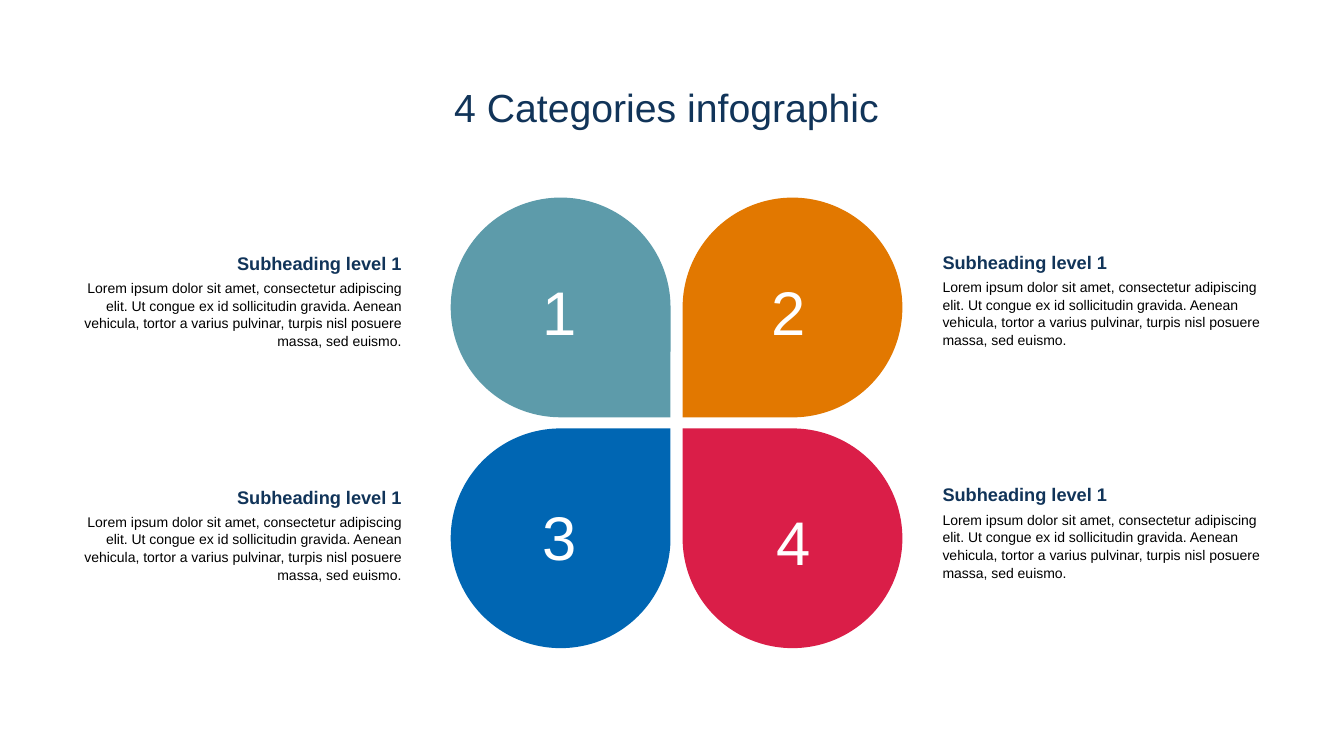
from pptx import Presentation
from pptx.dml.color import RGBColor
from pptx.enum.shapes import MSO_SHAPE
from pptx.enum.text import MSO_AUTO_SIZE, PP_ALIGN
from pptx.util import Inches, Pt

TEARDROP = MSO_SHAPE.TEAR
GROW = MSO_AUTO_SIZE.SHAPE_TO_FIT_TEXT
LEFT, CENTER, RIGHT = PP_ALIGN.LEFT, PP_ALIGN.CENTER, PP_ALIGN.RIGHT

THEME = {
    "font": "Arial",
    "navy": "113459",
    "black": "000000",
    "white": "FFFFFF",
    "petals": ["5D9BAA", "E27800", "0066B3", "DA1E48"],
    "title": 28,
    "number": 44,
    "heading": 13,
    "body": 10,
}
HEADING = "Subheading level 1"
BODY = (
    "Lorem ipsum dolor sit amet, consectetur adipiscing elit. "
    "Ut congue ex id sollicitudin gravida. Aenean vehicula, tortor a varius "
    "pulvinar, turpis nisl posuere massa, sed euismo."
)

PETAL = 2.18
PETAL_LEFT, PETAL_TOP = 4.47, 1.96
COLUMN_STEP, ROW_STEP = 2.3, 2.29
ROTATIONS = [90, 180, 0, 270]
NUMBER_PLACES = [(4.68, 2.67), (6.95, 2.67), (4.68, 4.9), (7, 4.95)]
CAPTION_PLACES = [(0.71, 2.52), (9.25, 2.51), (0.71, 4.84), (9.25, 4.82)]

deck = Presentation()
deck.slide_width, deck.slide_height = Inches(13.33), Inches(7.5)
page = deck.slides.add_slide(deck.slide_layouts[6])


def add_text(left, top, width, height, text, align):
    box = page.shapes.add_textbox(*map(Inches, (left, top, width, height)))
    frame = box.text_frame
    frame.word_wrap = True
    frame.auto_size = GROW
    frame.text = text
    for para in frame.paragraphs:
        para.alignment = align
    return frame.paragraphs


def style(para, size, color, bold=False):
    for span in para.runs:
        span.font.name = THEME["font"]
        span.font.size = Pt(THEME[size])
        span.font.color.rgb = RGBColor.from_string(THEME[color])
        span.font.bold = bold


title = add_text(0.64, 0.71, 11.94, 0.64, "4 Categories infographic", CENTER)[0]
title.line_spacing = 1.14
style(title, "title", "navy")

for index, color in enumerate(THEME["petals"]):
    row, column = divmod(index, 2)
    petal = page.shapes.add_shape(
        TEARDROP,
        Inches(PETAL_LEFT + column * COLUMN_STEP),
        Inches(PETAL_TOP + row * ROW_STEP),
        Inches(PETAL),
        Inches(PETAL),
    )
    petal.rotation = ROTATIONS[index]
    petal.shadow.inherit = False
    petal.fill.solid()
    petal.fill.fore_color.rgb = RGBColor.from_string(color)
    petal.line.fill.background()

    number = add_text(*NUMBER_PLACES[index], 1.75, 0.84, str(index + 1), CENTER)[0]
    style(number, "number", "white")

    heading, body = add_text(
        *CAPTION_PLACES[index], 3.37, 1, f"{HEADING}\n{BODY}", (RIGHT, LEFT)[column]
    )
    heading.line_spacing = 0.64
    style(heading, "heading", "navy", bold=True)
    body.space_before = Pt(4)
    body.line_spacing = 1.05
    style(body, "body", "black")

deck.save("out.pptx")
